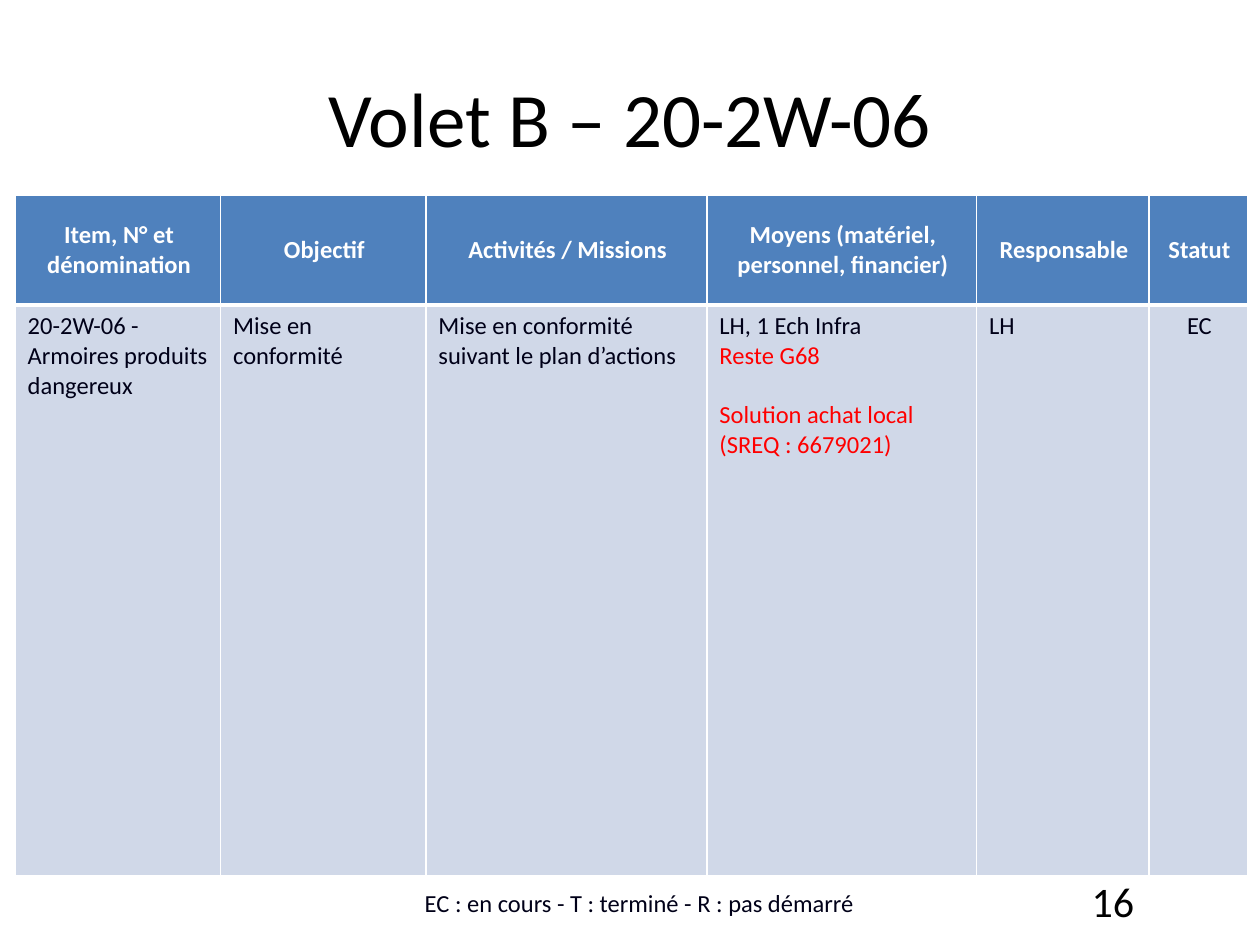
from dataclasses import dataclass

from lxml.etree import SubElement
from pptx import Presentation
from pptx.dml.color import RGBColor
from pptx.enum.text import MSO_ANCHOR as Anchor, PP_ALIGN as Align
from pptx.oxml.ns import qn
from pptx.util import Inches, Pt


@dataclass(frozen=True)
class Theme:
    font: str = "Calibri"
    black: str = "000000"
    ink: str = "000018"
    alert: str = "FF0000"
    white: str = "FFFFFF"
    header: str = "4F81BD"
    body: str = "D0D8E8"
    title_size: int = 44
    number_size: int = 24
    text_size: int = 14


THEME = Theme()


@dataclass(frozen=True)
class Line:
    text: str
    color: str = THEME.ink
    space_before: float = 0


@dataclass(frozen=True)
class Column:
    heading: str
    width: float
    lines: tuple[Line, ...]
    align: Align = Align.LEFT


COLUMNS = (
    Column("Item, N° et dénomination", 1.63,
           (Line("20-2W-06 - Armoires produits dangereux"),)),
    Column("Objectif", 1.63, (Line("Mise en conformité"),)),
    Column("Activités / Missions", 2.23,
           (Line("Mise en conformité suivant le plan d’actions"),)),
    Column("Moyens (matériel, personnel, financier)", 2.14,
           (Line("LH, 1 Ech Infra"),
            Line("Reste G68", THEME.alert),
            Line("Solution achat local (SREQ : 6679021)", THEME.alert, 17))),
    Column("Responsable", 1.37, (Line("LH"),)),
    Column("Statut", 0.78, (Line("EC"),), Align.CENTER),
)
ROW_HEIGHTS = (0.87, 4.53)


def write_text(frame, *lines: Line, size: int = THEME.text_size,
               bold: bool = False, align: Align = Align.LEFT) -> None:
    frame.word_wrap = True
    for index, line in enumerate(lines):
        paragraph = frame.add_paragraph() if index else frame.paragraphs[0]
        paragraph.alignment = align
        paragraph.space_before = Pt(line.space_before)
        run = paragraph.add_run()
        run.text = line.text
        run.font.name = THEME.font
        run.font.size = Pt(size)
        run.font.bold = bold
        run.font.color.rgb = RGBColor.from_string(line.color)


def add_text(slide, left: float, top: float, width: float, height: float,
             line: Line, anchor: Anchor, **text_format) -> None:
    box = slide.shapes.add_textbox(
        Inches(left), Inches(top), Inches(width), Inches(height))
    box.text_frame.vertical_anchor = anchor
    write_text(box.text_frame, line, **text_format)


def style_cell(cell, fill: str, bottom_width: float) -> None:
    # Borders come before the fill in the cell properties
    properties = cell._tc.get_or_add_tcPr()
    for side, width in (("L", 1), ("R", 1), ("T", 1), ("B", bottom_width)):
        border = SubElement(properties, qn(f"a:ln{side}"), w=str(Pt(width)))
        solid = SubElement(border, qn("a:solidFill"))
        SubElement(solid, qn("a:srgbClr"), val=THEME.white)
    cell.fill.solid()
    cell.fill.fore_color.rgb = RGBColor.from_string(fill)
    cell.margin_left = Inches(0.1)
    cell.margin_right = Inches(0.08)


def add_action_table(slide, left: float, top: float) -> None:
    total_width = sum(column.width for column in COLUMNS)
    table = slide.shapes.add_table(
        len(ROW_HEIGHTS), len(COLUMNS), Inches(left), Inches(top),
        Inches(total_width), Inches(sum(ROW_HEIGHTS))).table
    for row, height in zip(table.rows, ROW_HEIGHTS):
        row.height = Inches(height)
    for index, column in enumerate(COLUMNS):
        table.columns[index].width = Inches(column.width)
        heading, content = table.cell(0, index), table.cell(1, index)
        style_cell(heading, THEME.header, bottom_width=3)
        heading.vertical_anchor = Anchor.MIDDLE
        write_text(heading.text_frame, Line(column.heading, THEME.white),
                   bold=True, align=Align.CENTER)
        style_cell(content, THEME.body, bottom_width=1)
        write_text(content.text_frame, *column.lines, align=column.align)


def main() -> None:
    presentation = Presentation()
    presentation.slide_width = Inches(10)
    presentation.slide_height = Inches(7.5)
    slide = presentation.slides.add_slide(presentation.slide_layouts[6])

    # Title
    add_text(slide, 0.5, 0.3, 9, 1.25, Line("Volet B – 20-2W-06", THEME.black),
             Anchor.MIDDLE, size=THEME.title_size, align=Align.CENTER)
    # Action table
    add_action_table(slide, 0.12, 1.55)
    # Slide number and status legend
    add_text(slide, 7.17, 6.95, 1.93, 0.4, Line("16", THEME.black),
             Anchor.MIDDLE, size=THEME.number_size, align=Align.RIGHT)
    add_text(slide, 2.32, 6.95, 5.51, 0.38,
             Line("EC : en cours - T : terminé - R : pas démarré"),
             Anchor.BOTTOM, align=Align.CENTER)

    presentation.save("out.pptx")


if __name__ == "__main__":
    main()
